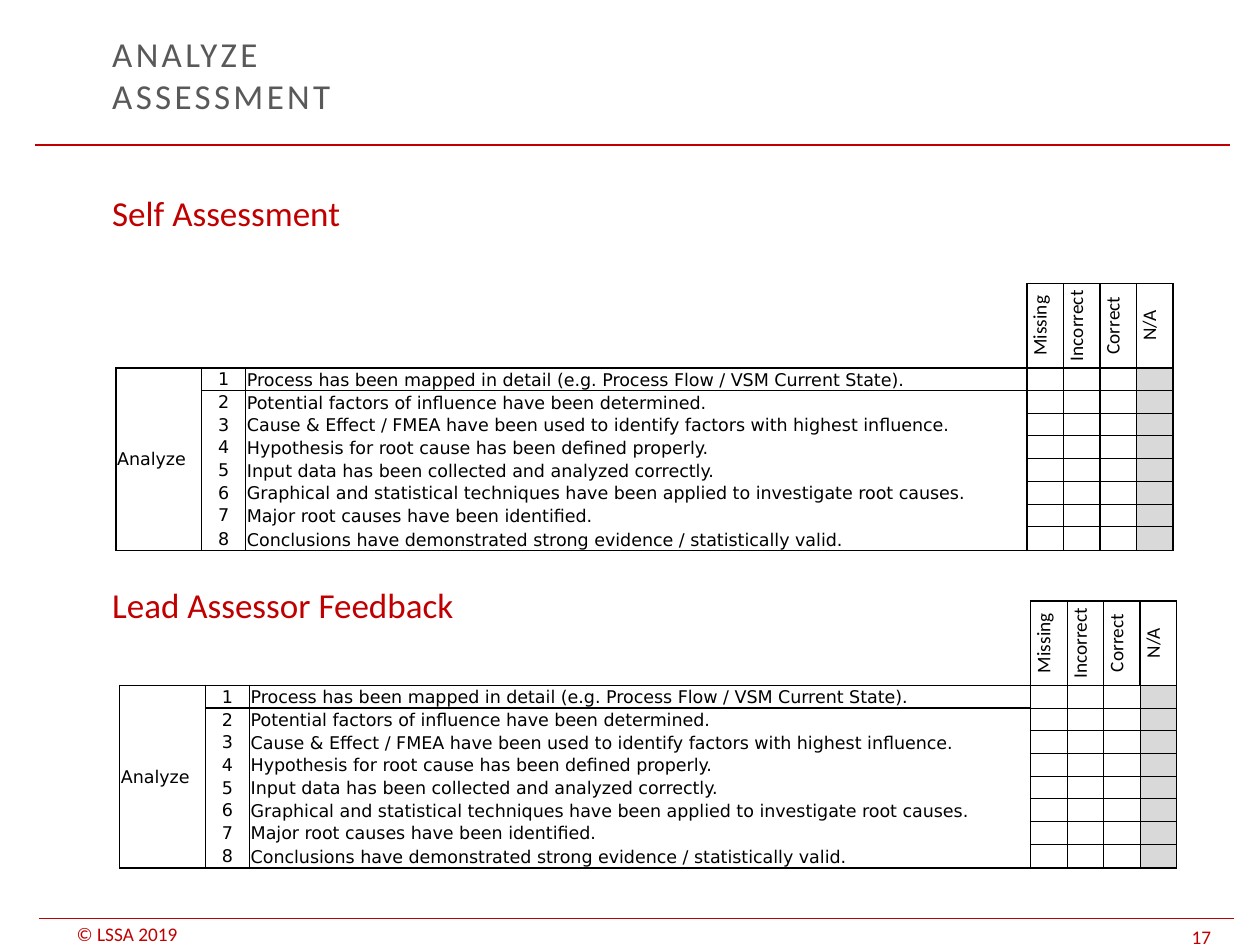
from lxml import etree
from pptx import Presentation
from pptx.dml import color
from pptx.enum import shapes, text
from pptx.oxml import ns
from pptx.util import Inches, Pt

RED = color.RGBColor(0xC0, 0x00, 0x00)
GRAY = color.RGBColor(0x59, 0x59, 0x59)
SHADE = color.RGBColor(0xD9, 0xD9, 0xD9)
BLACK = color.RGBColor(0x00, 0x00, 0x00)

RATINGS = ["Missing", "Incorrect", "Correct", "N/A"]
CHECKS = [
    "Process has been mapped in detail (e.g. Process Flow / VSM Current State).",
    "Potential factors of influence have been determined.",
    "Cause & Effect / FMEA have been used to identify factors with highest influence.",
    "Hypothesis for root cause has been defined properly.",
    "Input data has been collected and analyzed correctly.",
    "Graphical and statistical techniques have been applied to investigate root causes.",
    "Major root causes have been identified.",
    "Conclusions have demonstrated strong evidence / statistically valid.",
]
COL_WIDTHS = [0.68, 0.35, 6.2] + [0.29] * 4
ROW_HEIGHTS = [0.67] + [0.18] * 7 + [0.19]
FIRST_RATING = 3
HEADER_EDGES = [0, 0, 0, 1, 0.5, 1, 1, 1]
BODY_EDGES = [1, 1, 1, 1, 0.5, 1, 0.5, 1]

HEADING = {"size": Pt(20), "name": "Calibri"}
FOOTER = {"size": Pt(11), "name": "Calibri"}
RATING = {"size": Pt(11), "name": "Calibri"}
CHECK = {"size": Pt(10), "name": "DejaVu Sans"}
CELL_MARGINS = {
    "margin_left": Inches(0.01), "margin_right": Inches(0.01),
    "margin_top": Inches(0.01), "margin_bottom": 0,
}


def set_attrs(obj, values):
    for name, value in values.items():
        setattr(obj, name, value)


def format_runs(p, font, rgb):
    for r in p.runs:
        set_attrs(r.font, font)
        r.font.color.rgb = rgb


def place(sp, left, top, width, height):
    set_attrs(sp, {"left": Inches(left), "top": Inches(top),
                   "width": Inches(width), "height": Inches(height)})


def add_title(s, words):
    sp = s.shapes.title
    place(sp, 0.79, 0.26, 7.09, 0.66)
    tf = sp.text_frame
    tf.text = words
    set_attrs(tf, {"vertical_anchor": text.MSO_ANCHOR.MIDDLE,
                   "auto_size": text.MSO_AUTO_SIZE.NONE})
    p = tf.paragraphs[0]
    p.alignment = text.PP_ALIGN.LEFT
    format_runs(p, HEADING, GRAY)
    for r in p.runs:
        r.font._element.set("spc", "190")


def add_headings(s, headings):
    sp = s.placeholders[1]
    place(sp, 0.79, 1.47, 8.66, 5.51)
    tf = sp.text_frame
    tf.text = "\n".join(headings)
    tf.auto_size = text.MSO_AUTO_SIZE.NONE
    for i, p in enumerate(tf.paragraphs):
        pPr = p._p.get_or_add_pPr()
        pPr.set("marL", str(Inches(0.38)))
        pPr.set("indent", str(-Inches(0.38)))
        etree.SubElement(pPr, ns.qn("a:buNone"))
        p.space_before = Pt(200 * i)
        format_runs(p, HEADING, RED)


def add_footer(s, words, left, top, width, height):
    sp = s.shapes.add_textbox(Inches(left), Inches(top), Inches(width), Inches(height))
    tf = sp.text_frame
    tf.text = words
    set_attrs(tf, {"margin_top": 0, "margin_bottom": 0, "word_wrap": False,
                   "vertical_anchor": text.MSO_ANCHOR.BOTTOM})
    format_runs(tf.paragraphs[0], FOOTER, RED)


def add_rule(s, left, top, width):
    line = s.shapes.add_connector(
        shapes.MSO_CONNECTOR.STRAIGHT,
        Inches(left), Inches(top), Inches(left + width), Inches(top))
    line.line.color.rgb = RED
    line.line.width = Pt(0.75)
    etree.SubElement(line._element.spPr, ns.qn("a:effectLst"))


def set_borders(cell, widths):
    tcPr = cell._tc.get_or_add_tcPr()
    drawn = [(side, width) for side, width in zip("LRTB", widths) if width]
    for i, (side, width) in enumerate(drawn):
        ln = etree.Element(ns.qn(f"a:ln{side}"), w=str(Pt(width)))
        fill = etree.SubElement(ln, ns.qn("a:solidFill"))
        etree.SubElement(fill, ns.qn("a:srgbClr"), val=str(BLACK))
        tcPr.insert(i, ln)


def horizontal_edge(y, col):
    if y in (1, len(ROW_HEIGHTS)):
        return 1
    if col < FIRST_RATING:
        return 0
    return 0.5 if y else 1


def fill_cell(cell, words, font, align, anchor):
    set_attrs(cell, CELL_MARGINS)
    cell.vertical_anchor = anchor
    cell.text = words
    p = cell.text_frame.paragraphs[0]
    p.alignment = align
    format_runs(p, font, BLACK)
    if not words:
        p._p.get_or_add_endParaRPr().set("sz", "1000")


def add_checklist(s, left, top):
    rows = [["", "", ""] + RATINGS]
    rows += [["", str(n), check] + [""] * len(RATINGS)
             for n, check in enumerate(CHECKS, 1)]
    rows[1][0] = "Analyze"
    frame = s.shapes.add_table(
        len(rows), len(COL_WIDTHS), Inches(left), Inches(top),
        Inches(sum(COL_WIDTHS)), Inches(sum(ROW_HEIGHTS)))
    table = frame.table
    set_attrs(table, {"first_row": False, "horz_banding": False})
    style = table._tbl.tblPr.find(ns.qn("a:tableStyleId"))
    style.text = "{2D5ABB26-0587-4C30-8999-92F81FD0307C}"
    for column, width in zip(table.columns, COL_WIDTHS):
        column.width = Inches(width)
    for row, height in zip(table.rows, ROW_HEIGHTS):
        row.height = Inches(height)
    table.cell(1, 0).merge(table.cell(len(CHECKS), 0))

    for y, row in enumerate(rows):
        edges = BODY_EDGES if y else HEADER_EDGES
        for x, words in enumerate(row):
            cell = table.cell(y, x)
            centred = x == 1 or x >= FIRST_RATING
            fill_cell(
                cell, words, CHECK if y else RATING,
                text.PP_ALIGN.CENTER if centred else text.PP_ALIGN.LEFT,
                text.MSO_ANCHOR.MIDDLE if y and x < 2 else text.MSO_ANCHOR.BOTTOM)
            if y and x == len(row) - 1:
                cell.fill.solid()
                cell.fill.fore_color.rgb = SHADE
            else:
                cell.fill.background()
            if not y and words:
                cell._tc.get_or_add_tcPr().set("vert", "vert270")
            span = cell.span_height if cell.is_merge_origin else 1
            set_borders(cell, [edges[x], edges[x + 1], horizontal_edge(y, x),
                               horizontal_edge(y + span, x)])


def main():
    prs = Presentation()
    prs.slide_width, prs.slide_height = Inches(10), Inches(7.5)
    s = prs.slides.add_slide(prs.slide_layouts[1])
    add_footer(s, "© LSSA 2019", 0.51, 7.32, 1.42, 0.18)
    add_footer(s, "17", 9.36, 7.31, 0.64, 0.22)
    add_rule(s, 0.28, 1.15, 9.48)
    add_rule(s, 0.31, 7.29, 9.48)
    add_title(s, "ANALYZE\vASSESSMENT")
    add_headings(s, ["Self Assessment", "Lead Assessor Feedback"])
    add_checklist(s, 0.92, 2.25)
    add_checklist(s, 0.95, 4.77)
    prs.save("out.pptx")


if __name__ == "__main__":
    main()
